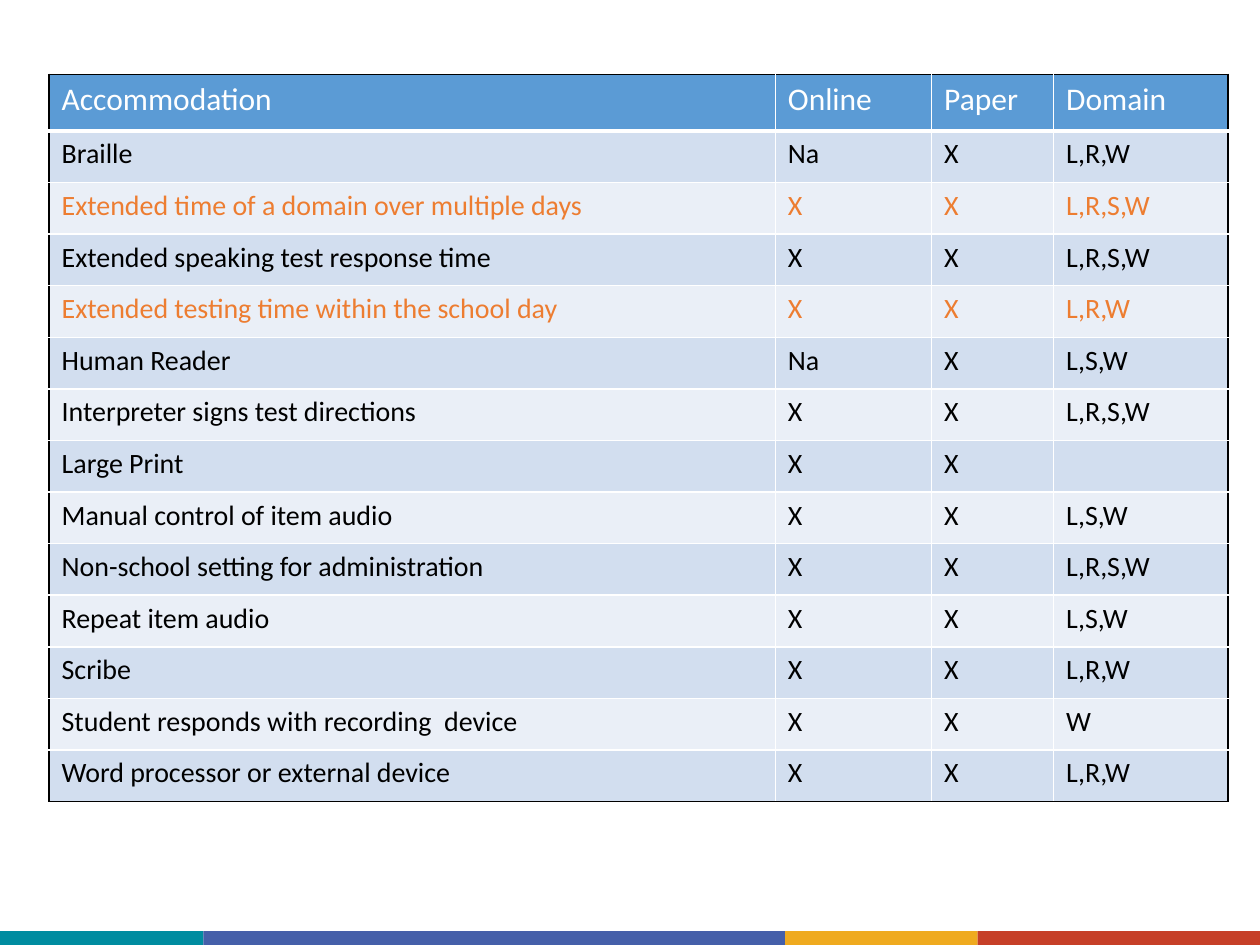
from lxml.etree import SubElement
from pptx import Presentation
from pptx.dml.color import RGBColor
from pptx.enum.shapes import MSO_SHAPE as Shape
from pptx.oxml.ns import qn
from pptx.util import Cm, Pt

WHITE = RGBColor(0xFF, 0xFF, 0xFF)
BLACK = RGBColor(0x00, 0x00, 0x00)
ORANGE = RGBColor(0xED, 0x7D, 0x31)
HEADER_BLUE = RGBColor(0x5B, 0x9B, 0xD5)
BAND_DARK = RGBColor(0xD2, 0xDE, 0xEF)
BAND_LIGHT = RGBColor(0xEA, 0xEF, 0xF7)
TEAL = RGBColor(0x00, 0x8C, 0xA0)
INDIGO = RGBColor(0x45, 0x5F, 0xA9)
AMBER = RGBColor(0xEF, 0xAA, 0x1F)
RED = RGBColor(0xC6, 0x3F, 0x28)

STRIPES = [(4.1, TEAL), (11.73, INDIGO), (3.88, AMBER), (5.69, RED)]
COLUMN_WIDTHS = [14.64, 3.15, 2.46, 3.51]
HEADER_HEIGHT, ROW_HEIGHT = 1.14, 1.04
HEADER_FORMAT = {"name": "Calibri", "size": Pt(18), "bold": False}
BODY_FORMAT = {"name": "Calibri", "size": Pt(16), "bold": False}

ACCOMMODATIONS = [
    ("Accommodation", "Online", "Paper", "Domain"),
    ("Braille", "Na", "X", "L,R,W"),
    ("Extended time of a domain over multiple days", "X", "X", "L,R,S,W"),
    ("Extended speaking test response time", "X", "X", "L,R,S,W"),
    ("Extended testing time within the school day", "X", "X", "L,R,W"),
    ("Human Reader", "Na", "X", "L,S,W"),
    ("Interpreter signs test directions", "X", "X", "L,R,S,W"),
    ("Large Print", "X", "X", ""),
    ("Manual control of item audio", "X", "X", "L,S,W"),
    ("Non-school setting for administration", "X", "X", "L,R,S,W"),
    ("Repeat item audio", "X", "X", "L,S,W"),
    ("Scribe", "X", "X", "L,R,W"),
    ("Student responds with recording  device", "X", "X", "W"),
    ("Word processor or external device", "X", "X", "L,R,W"),
]
HIGHLIGHTED_ROWS = {2, 4}


def add_stripes(slide):
    """Lay the coloured stripes end to end along the foot of the slide."""
    left = 0
    for width, color in STRIPES:
        stripe = slide.shapes.add_shape(
            Shape.RECTANGLE, Cm(left), Cm(18.77), Cm(width), Cm(0.28))
        stripe.shadow.inherit = False
        stripe.fill.solid()
        stripe.fill.fore_color.rgb = color
        stripe.line.fill.background()
        left += width


def add_border(cell, side, color, points):
    """Draw one side of a cell; sides must come in the order L, R, T, B."""
    properties = cell._tc.get_or_add_tcPr()
    border = SubElement(properties, qn(f"a:ln{side}"), w=str(Pt(points)))
    fill = SubElement(border, qn("a:solidFill"))
    SubElement(fill, qn("a:srgbClr"), val=str(color))


def add_borders(cell, row, column):
    """Rule the cell in white inside the table and black on its outer edge."""
    last_row, last_column = len(ACCOMMODATIONS) - 1, len(COLUMN_WIDTHS) - 1
    outer_sides = {"L": column == 0, "R": column == last_column,
                   "T": row == 0, "B": row == last_row}
    for side, is_outer in outer_sides.items():
        points = 3 if row == 0 and side == "B" else 1
        add_border(cell, side, BLACK if is_outer else WHITE, points)


def row_style(row):
    """Return the fill, text colour and font format of a row."""
    if row == 0:
        return HEADER_BLUE, WHITE, HEADER_FORMAT
    band = BAND_DARK if row % 2 else BAND_LIGHT
    return band, ORANGE if row in HIGHLIGHTED_ROWS else BLACK, BODY_FORMAT


def fill_cell(cell, text, style):
    """Write the text of a cell and give it its row's style."""
    background, text_color, font_format = style
    cell.fill.solid()
    cell.fill.fore_color.rgb = background
    cell.text = text
    paragraph = cell.text_frame.paragraphs[0]
    for font in [paragraph.font] + [run.font for run in paragraph.runs]:
        for attribute, value in font_format.items():
            setattr(font, attribute, value)
        font.color.rgb = text_color


def add_accommodations(slide):
    """Add the table of testing accommodations."""
    row_count = len(ACCOMMODATIONS)
    height = HEADER_HEIGHT + ROW_HEIGHT * (row_count - 1)
    table = slide.shapes.add_table(
        row_count, len(COLUMN_WIDTHS), Cm(0.99), Cm(1.5),
        Cm(sum(COLUMN_WIDTHS)), Cm(height)).table
    table.horz_banding = False
    for column, width in zip(table.columns, COLUMN_WIDTHS):
        column.width = Cm(width)
    for row, texts in enumerate(ACCOMMODATIONS):
        table.rows[row].height = Cm(ROW_HEIGHT if row else HEADER_HEIGHT)
        for column, text in enumerate(texts):
            cell = table.cell(row, column)
            add_borders(cell, row, column)
            fill_cell(cell, text, row_style(row))


def main():
    """Build and save the accommodations slide."""
    presentation = Presentation()
    presentation.slide_width, presentation.slide_height = Cm(25.4), Cm(19.05)
    slide = presentation.slides.add_slide(presentation.slide_layouts[6])
    add_stripes(slide)
    add_accommodations(slide)
    presentation.save("out.pptx")


if __name__ == "__main__":
    main()
